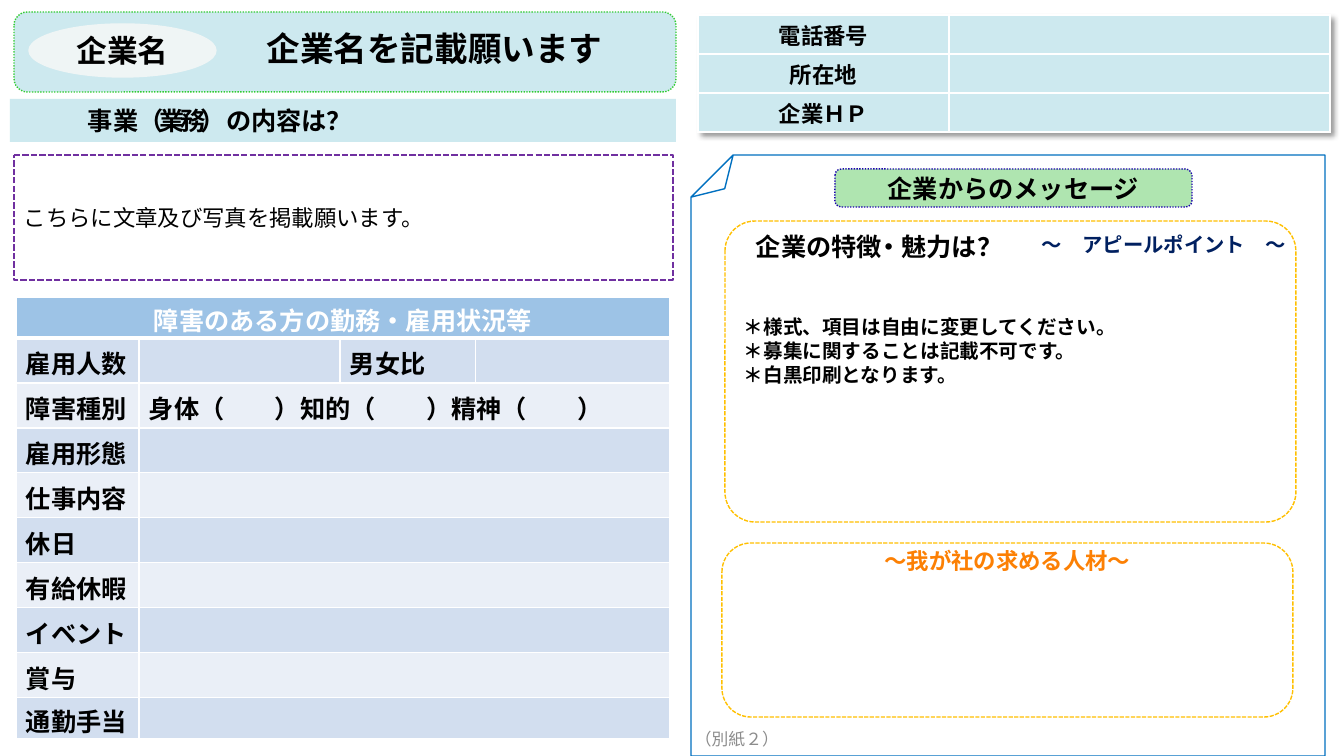
from lxml import etree
from pptx import Presentation
from pptx.dml.color import RGBColor
from pptx.enum.dml import MSO_LINE
from pptx.enum.shapes import MSO_SHAPE
from pptx.enum.text import MSO_ANCHOR, PP_ALIGN
from pptx.oxml.ns import qn
from pptx.util import Emu, Pt

ROUND, RECT = MSO_SHAPE.ROUNDED_RECTANGLE, MSO_SHAPE.RECTANGLE
OVAL, FOLDED = MSO_SHAPE.OVAL, MSO_SHAPE.FOLDED_CORNER
DOT, DASH = MSO_LINE.ROUND_DOT, MSO_LINE.SQUARE_DOT
LEFT, CENTER = PP_ALIGN.LEFT, PP_ALIGN.CENTER
TOP, MIDDLE = MSO_ANCHOR.TOP, MSO_ANCHOR.MIDDLE

CONTACT_ROWS = ["電話番号", "所在地", "企業ＨＰ"]
STAFF_TITLE = "障害のある方の勤務・雇用状況等"
STAFF_ROWS = [
    ("雇用人数", "", "男女比", ""),
    ("障害種別", "身体（　　）知的（　　）精神（　　）"),
    ("雇用形態", ""),
    ("仕事内容", ""),
    ("休日", ""),
    ("有給休暇", ""),
    ("イベント", ""),
    ("賞与", ""),
    ("通勤手当", ""),
]
# Each span is (text, letter spacing in hundredths of a point)
BUSINESS = [("事業", 0), ("（業務）", -310), ("の内容は？", 0)]
FEATURES = [("企業の特", 0), ("徴・", -400), ("魅力は？", 0)]
NOTES = ["＊様式、項目は自由に変更してください。",
         "＊募集に関することは記載不可です。",
         "＊白黒印刷となります。"]

THEME = {
    "font": "Noto Sans CJK JP",
    "black": "000000", "white": "FFFFFF", "navy": "002060", "grey": "8C8C8C",
    "orange": "FC8004", "sky": "CDE9EF", "pale": "EFF5F5", "mint": "AFE5B0",
    "page": "0070C0", "indigo": "1B03AD", "purple": "7030A0",
    "green": "33CC33", "gold": "FFC000", "header": "9DC3E6",
    "bands": ("D2DEEF", "EAEFF7"),
    "title": 24, "badge": 22, "heading": 18, "body": 16,
    "appeal": 14.5, "notes": 14, "small": 12,
}


def px(length):
    return Emu(round(length * 914400 / 100.8))


def color(name):
    return RGBColor.from_string(THEME.get(name, name))


def write(frame, lines, size, ink="black", bold=True, align=CENTER,
          anchor=MIDDLE, insets=(10, 5, 10, 5), leading=None):
    """Fill a text frame; a line is a string or a list of spaced spans."""
    frame.word_wrap = True
    frame.vertical_anchor = anchor
    (frame.margin_left, frame.margin_top,
     frame.margin_right, frame.margin_bottom) = map(px, insets)
    for index, line in enumerate(lines):
        para = frame.add_paragraph() if index else frame.paragraphs[0]
        style(para, size, ink, bold, align)
        if leading:
            para.line_spacing = Pt(leading)
        for text, spacing in [(line, 0)] if isinstance(line, str) else line:
            span = para.add_run()
            span.text = text
            if spacing:
                span._r.get_or_add_rPr().set("spc", str(spacing))


def style(para, size, ink, bold, align):
    para.alignment = align
    para.font.size = Pt(THEME[size])
    para.font.bold = bold
    para.font.color.rgb = color(ink)
    para.font.name = THEME["font"]
    properties = para._p.pPr.find(qn("a:defRPr"))
    etree.SubElement(properties, qn("a:ea"), typeface=THEME["font"])


def set_corner(panel, corner):
    guides = panel._element.spPr.find(qn("a:prstGeom")).get_or_add_avLst()
    for guide in list(guides):
        guides.remove(guide)
    etree.SubElement(guides, qn("a:gd"), name="adj", fmla=f"val {round(corner * 100000)}")


def add_panel(shapes, kind, area, fill=None, line=None, dash=None, width=1, corner=None):
    panel = shapes.add_shape(kind, *map(px, area))
    panel.shadow.inherit = False
    if corner is not None:
        set_corner(panel, corner)
    if fill:
        panel.fill.solid()
        panel.fill.fore_color.rgb = color(fill)
    else:
        panel.fill.background()
    if line:
        panel.line.color.rgb = color(line)
        panel.line.width = Pt(width)
        if dash:
            panel.line.dash_style = dash
    else:
        panel.line.fill.background()
    return panel


def add_text(shapes, area, lines, size, **options):
    write(shapes.add_textbox(*map(px, area)).text_frame, lines, size, **options)


def add_grid(shapes, left, top, columns, rows):
    grid = shapes.add_table(len(rows), len(columns), px(left), px(top),
                            px(sum(columns)), px(sum(rows))).table
    for column, width in zip(grid.columns, columns):
        column.width = px(width)
    for row, height in zip(grid.rows, rows):
        row.height = px(height)
    return grid


def paint(cell, fill, top=1, bottom=1):
    """Give a cell white borders and a solid fill."""
    properties = cell._tc.get_or_add_tcPr()
    for side, width in (("L", 1), ("R", 1), ("T", top), ("B", bottom)):
        border = etree.SubElement(properties, qn("a:ln" + side), w=str(int(Pt(width))))
        solid = etree.SubElement(border, qn("a:solidFill"))
        etree.SubElement(solid, qn("a:srgbClr"), val=THEME["white"])
    cell.fill.solid()
    cell.fill.fore_color.rgb = color(fill)


def write_cell(cell, text, size, align=LEFT, ink="black", top=0):
    para = cell.text_frame.paragraphs[0]
    style(para, size, ink, True, align)
    if text:
        para.add_run().text = text
    cell.vertical_anchor = MIDDLE
    cell.margin_left = cell.margin_right = px(10)
    cell.margin_top, cell.margin_bottom = px(top), 0


def add_contacts(shapes):
    grid = add_grid(shapes, 698, 15, [251, 381], [39] * len(CONTACT_ROWS))
    effects = etree.Element(qn("a:effectLst"))
    shadow = etree.SubElement(effects, qn("a:outerShdw"), blurRad="50800",
                              dist="38100", dir="2700000", algn="tl")
    shade = etree.SubElement(shadow, qn("a:srgbClr"), val=THEME["black"])
    etree.SubElement(shade, qn("a:alpha"), val="40000")
    grid._tbl.tblPr.insert(0, effects)
    for row, label in enumerate(CONTACT_ROWS):
        for column, text in enumerate((label, "")):
            cell = grid.cell(row, column)
            paint(cell, "sky")
            write_cell(cell, text, "body", CENTER)


def add_staff(shapes):
    grid = add_grid(shapes, 16, 297, [123, 201, 136, 194], [41] + [45] * 8 + [41])
    for row, texts in enumerate([(STAFF_TITLE,)] + STAFF_ROWS):
        fill = THEME["bands"][(row - 1) % 2] if row else "header"
        for column in range(4):
            paint(grid.cell(row, column), fill, 3 if row == 1 else 1, 1 if row else 3)
        if len(texts) < 4:
            grid.cell(row, len(texts) - 1).merge(grid.cell(row, 3))
        for column, text in enumerate(texts):
            write_cell(grid.cell(row, column), text, "heading",
                       LEFT if row else CENTER, "black" if row else "white", top=4)


def main():
    deck = Presentation()
    deck.slide_width, deck.slide_height = px(1344), px(756)
    shapes = deck.slides.add_slide(deck.slide_layouts[6]).shapes

    appeal = add_panel(shapes, ROUND, (1011, 233, 290, 30), corner=0)
    write(appeal.text_frame, ["～　アピールポイント　～"], "appeal", "navy",
          align=LEFT, anchor=TOP, insets=(31, 5, 0, 5), leading=13.6)
    sheet = add_panel(shapes, FOLDED, (691, 155, 634, 601), line="page", corner=0.07)
    sheet.rotation = 180
    add_contacts(shapes)

    message = add_panel(shapes, ROUND, (835, 169, 357, 38), "mint", "indigo", DOT)
    write(message.text_frame, ["企業からのメッセージ"], "heading", insets=(0, 0, 0, 0))
    business = add_panel(shapes, RECT, (10, 99, 666, 43), "sky")
    write(business.text_frame, [BUSINESS], "heading", align=LEFT, insets=(78, 5, 10, 5))
    intro = add_panel(shapes, ROUND, (14, 155, 659, 125), None, "purple", DASH, 1.5, 0)
    write(intro.text_frame, ["こちらに文章及び写真を掲載願います。"], "body",
          bold=False, align=LEFT)

    banner = shapes.add_group_shape().shapes
    add_panel(banner, ROUND, (14, 12, 662, 80), "sky", "green", DOT)
    badge = add_panel(banner, OVAL, (29, 24, 187, 53), "pale", "pale")
    write(badge.text_frame, ["企業名"], "badge", insets=(0, 0, 0, 0))
    add_text(shapes, (233, 23, 403, 50), ["企業名を記載願います"], "title")

    talent = add_panel(shapes, ROUND, (722, 543, 571, 174), None, "gold", DASH)
    write(talent.text_frame, ["～我が社の求める人材～"], "body", "orange",
          anchor=TOP, insets=(10, 0, 10, 0), leading=16)
    features = add_panel(shapes, ROUND, (725, 221, 571, 301), None, "gold", DASH,
                         corner=0.1)
    write(features.text_frame, NOTES, "notes", align=LEFT, anchor=TOP,
          insets=(10, 85, 10, 5), leading=17)
    add_text(shapes, (722, 226, 300, 40), [FEATURES], "heading",
             align=LEFT, insets=(34, 5, 0, 5))
    add_text(shapes, (510, 719, 454, 40), ["（別紙２）"], "small", ink="grey", bold=False)
    add_staff(shapes)
    deck.save("out.pptx")


if __name__ == "__main__":
    main()
